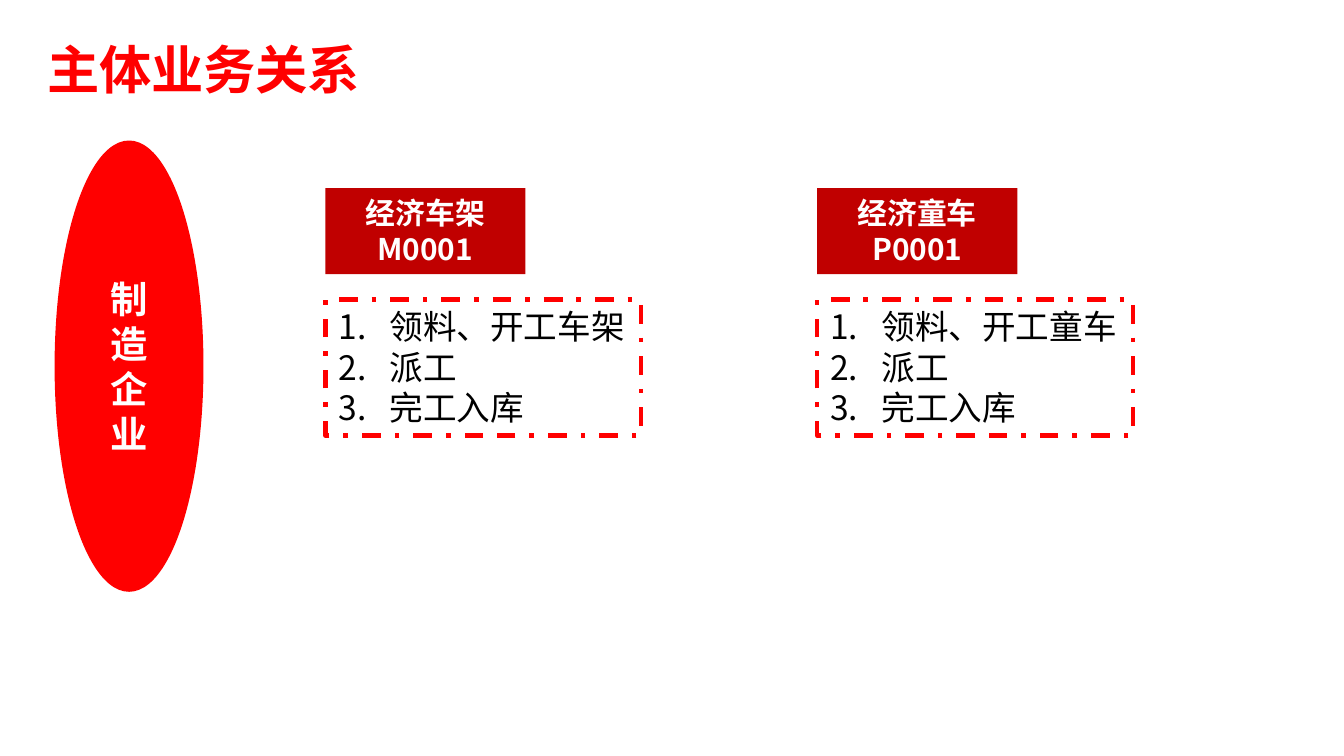
from lxml import etree
from pptx import Presentation
from pptx.dml.color import RGBColor
from pptx.enum.dml import MSO_LINE
from pptx.enum.shapes import MSO_SHAPE
from pptx.enum.text import MSO_ANCHOR, PP_ALIGN
from pptx.oxml.ns import qn
from pptx.util import Inches, Pt

OVAL, RECT = MSO_SHAPE.OVAL, MSO_SHAPE.RECTANGLE
TOP, MIDDLE = MSO_ANCHOR.TOP, MSO_ANCHOR.MIDDLE
LEFT, CENTER = PP_ALIGN.LEFT, PP_ALIGN.CENTER
DASH_DOT = MSO_LINE.DASH_DOT

TITLE = "主体业务关系"
COMPANY = "制造企业"
PRODUCTS = [
    ("经济车架M0001", ["领料、开工车架", "派工", "完工入库"]),
    ("经济童车P0001", ["领料、开工童车", "派工", "完工入库"]),
]

RED, DARK_RED, WHITE, BLACK = "FF0000", "C00000", "FFFFFF", "000000"
LATIN, CJK = "Calibri", "Noto Sans CJK SC"
TITLE_FONT = {"name": LATIN, "size": Pt(28), "bold": True}
COMPANY_FONT = {"name": LATIN, "size": Pt(20), "bold": True}
PRODUCT_FONT = {"name": CJK, "size": Pt(16), "bold": True}
STEP_FONT = {"name": CJK, "size": Pt(18), "bold": False}

PAGE_WIDTH = 10
PAGE_HEIGHT = PAGE_WIDTH * 9 / 16
COLUMN_LEFT, COLUMN_PITCH = 2.42, 3.66
NUMBER_INDENT = Inches(0.38)


def colour(value):
    return RGBColor.from_string(value)


def number(para):
    """Give the paragraph an automatic number with a hanging indent."""
    properties = para._p.get_or_add_pPr()
    properties.set("marL", str(NUMBER_INDENT))
    properties.set("indent", str(-NUMBER_INDENT))
    etree.SubElement(properties, qn("a:buFont"), typeface="+mj-lt")
    etree.SubElement(properties, qn("a:buAutoNum"), type="arabicPeriod")


def write(shape, lines, font, ink, align, anchor, wrap=True, numbered=False):
    frame = shape.text_frame
    frame.word_wrap = wrap
    frame.vertical_anchor = anchor
    for index, line in enumerate(lines):
        para = frame.paragraphs[0] if index == 0 else frame.add_paragraph()
        para.alignment = align
        if numbered:
            number(para)
        span = para.add_run()
        span.text = line
        for name, value in font.items():
            setattr(span.font, name, value)
        span.font.color.rgb = colour(ink)
        east_asian = etree.SubElement(span._r.get_or_add_rPr(), qn("a:ea"))
        east_asian.set("typeface", CJK)


def add_shape(page, kind, place, fill, line_width=0, dash=None):
    shape = page.shapes.add_shape(kind, *map(Inches, place))
    shape.shadow.inherit = False
    shape.fill.solid()
    shape.fill.fore_color.rgb = colour(fill)
    if line_width:
        shape.line.color.rgb = colour(RED)
        shape.line.width = Pt(line_width)
        shape.line.dash_style = dash
    else:
        shape.line.fill.background()
    return shape


deck = Presentation()
deck.slide_width, deck.slide_height = Inches(PAGE_WIDTH), Inches(PAGE_HEIGHT)
page = deck.slides.add_slide(deck.slide_layouts[5])

title = page.shapes.title
title.left, title.top, title.width, title.height = map(Inches, (0.25, 0.23, 7.58, 0.46))
write(title, [TITLE], TITLE_FONT, RED, LEFT, TOP)

company = add_shape(page, OVAL, (0.42, 1.06, 1.08, 3.33), RED, 2)
write(company, COMPANY, COMPANY_FONT, WHITE, CENTER, MIDDLE)

for column, (product, steps) in enumerate(PRODUCTS):
    left = COLUMN_LEFT + column * COLUMN_PITCH
    header = add_shape(page, RECT, (left, 1.4, 1.49, 0.64), DARK_RED)
    write(header, [product], PRODUCT_FONT, WHITE, CENTER, TOP)
    panel = add_shape(page, RECT, (left, 2.23, 2.35, 1.01), WHITE, 2.5, DASH_DOT)
    write(panel, steps, STEP_FONT, BLACK, LEFT, TOP, wrap=False, numbered=True)

deck.save("out.pptx")
